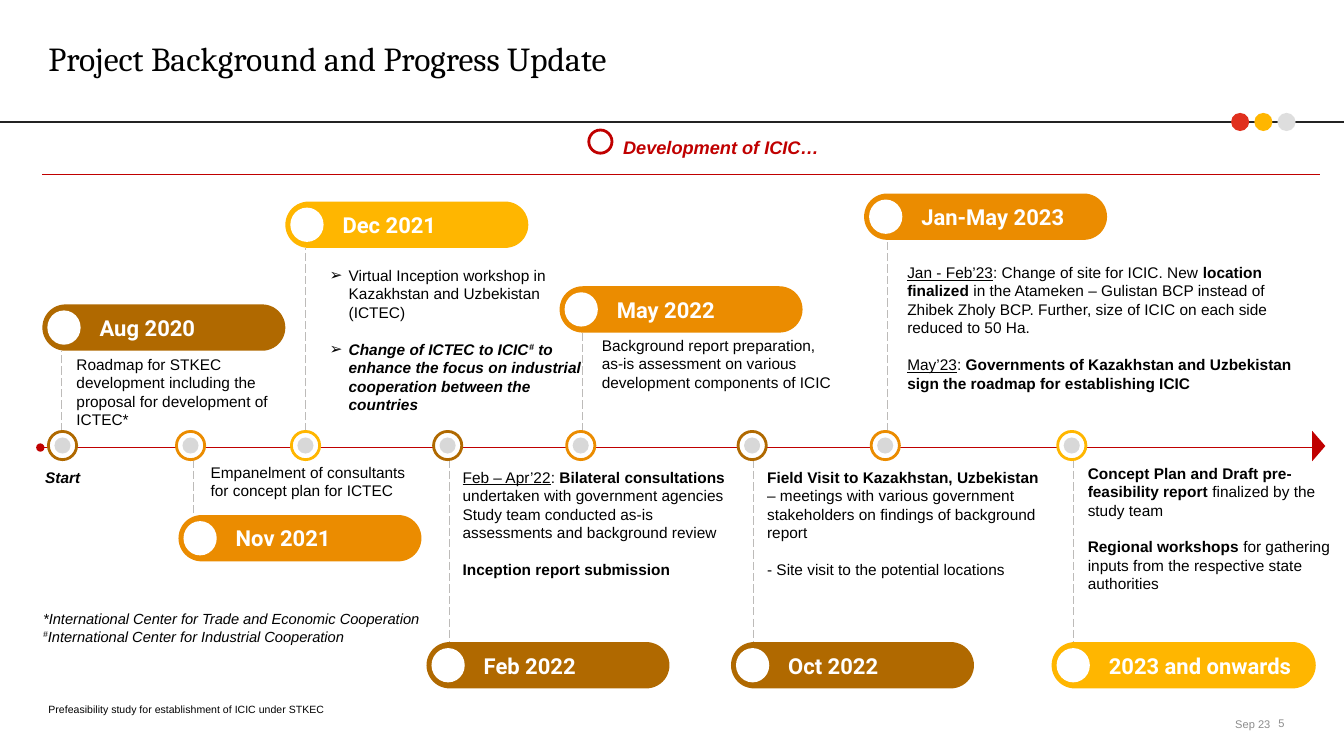
from collections import namedtuple
from dataclasses import dataclass

from lxml.etree import SubElement
from pptx import Presentation
from pptx.dml.color import RGBColor
from pptx.enum.dml import MSO_LINE
from pptx.enum.shapes import MSO_CONNECTOR, MSO_SHAPE
from pptx.enum.text import MSO_ANCHOR, PP_ALIGN
from pptx.oxml.ns import qn
from pptx.util import Inches, Pt


@dataclass(frozen=True)
class Theme:
    black: str = "000000"
    white: str = "FFFFFF"
    rule: str = "232323"
    accent: str = "C00000"
    red: str = "E0301E"
    yellow: str = "FFB600"
    orange: str = "EB8C00"
    brown: str = "B06900"
    light: str = "DEDEDE"
    core: str = "D8D8D8"
    stem: str = "BDBBB9"
    muted: str = "8C8C8C"
    body_font: str = "Arial"
    title_font: str = "Cambria"
    date_font: str = "Roboto"
    title: float = 24
    date: float = 15.7
    heading: float = 13
    body: float = 11
    note: float = 10.5
    number: float = 7.9
    footer: float = 7.5
    gap: float = 13


T = Theme()
Milestone = namedtuple("Milestone", "date left top width color node stem")
MILESTONES = [
    Milestone("Aug 2020", 0.42, 3.02, 2.41, T.brown, 0.48, 0.61),
    Milestone("Nov 2021", 1.77, 5.11, 2.41, T.orange, 1.75, 1.92),
    Milestone("Dec 2021", 2.83, 2.0, 2.41, T.yellow, 2.89, 3.03),
    Milestone("Feb 2022", 4.23, 6.37, 2.41, T.brown, 4.3, 4.46),
    Milestone("May 2022", 5.55, 2.84, 2.41, T.orange, 5.62, 5.78),
    Milestone("Oct 2022", 7.25, 6.37, 2.41, T.brown, 7.32, 7.47),
    Milestone("Jan-May 2023", 8.57, 1.92, 2.41, T.orange, 8.64, 8.8),
    Milestone("2023 and onwards", 10.43, 6.37, 2.62, T.yellow, 10.49, 10.65),
]
AXIS_Y = 4.44
PILL_HEIGHT = 0.46
NODE_TOP = 4.28
NODE_SIZE = 0.28

DETAILS = [
    ((0.66, 3.52, 2.45, 0.82), [[
        ("Roadmap for STKEC development including the proposal for development of ICTEC*", "")]]),
    ((1.99, 4.59, 2.17, 0.69), [[
        ("Empanelment of consultants for concept plan for ICTEC", "")]]),
    ((4.49, 4.64, 2.83, 1.54), [
        [("Feb – Apr’22", "u"), (":", ""), (" Bilateral consultations ", "b"),
         ("undertaken with government agencies", "")],
        [("Study team conducted as-is assessments and background review", "")],
        [("Inception report submission", "b")]]),
    ((5.87, 3.33, 2.51, 0.84), [[
        ("Background report preparation, as-is assessment on various development "
         "components of ICIC", "")]]),
    ((7.51, 4.64, 2.92, 1.54), [
        [("Field Visit to Kazakhstan, Uzbekistan ", "b"),
         ("– meetings with various government stakeholders on findings of background report", "")],
        [("- Site visit to the potential locations", "")]]),
    ((8.9, 2.61, 4.02, 1.61), [
        [("Jan - Feb’23", "u"), (": Change of site for ICIC. New ", ""),
         ("location finalized ", "b"),
         ("in the Atameken – Gulistan BCP instead of Zhibek Zholy BCP. Further, size of "
          "ICIC on each side reduced to 50 Ha.", "")],
        [("May’23", "u"), (": ", ""),
         ("Governments of Kazakhstan and Uzbekistan sign the roadmap for establishing ICIC", "b")]]),
    ((10.69, 4.6, 2.62, 1.7), [
        [("Concept Plan and Draft pre-feasibility report ", "b"),
         ("finalized by the study team", "")],
        [("Regional workshops ", "b"),
         ("for gathering inputs from the respective state authorities", "")]]),
    ((0.35, 4.64, 0.93, 0.22), [[("Start", "bi")]]),
]
INCEPTION = [
    [("Virtual Inception workshop in Kazakhstan and Uzbekistan (ICTEC)", "")],
    [("Change of ICTEC to ICIC", "bi"), ("#", "bi^"),
     (" to enhance the focus on industrial cooperation between the countries", "bi")],
]
FOOTNOTES = [
    [("*International Center for Trade and Economic Cooperation", "i")],
    [("#", "i^"), ("International Center for Industrial Cooperation", "i")],
]


def rgb(color):
    return RGBColor.from_string(color)


def add_bullet(paragraph):
    properties = paragraph._p.get_or_add_pPr()
    properties.set("marL", str(Inches(0.19)))
    properties.set("indent", str(Inches(-0.19)))
    tint = SubElement(properties, qn("a:buClr"))
    SubElement(tint, qn("a:srgbClr")).set("val", T.black)
    SubElement(properties, qn("a:buFont")).set("typeface", T.body_font)
    SubElement(properties, qn("a:buChar")).set("char", "➢")


def write(frame, paragraphs, size=T.body, color=T.black, font=T.body_font, inset=(0.1, 0, 0.1, 0),
          anchor=MSO_ANCHOR.TOP, align=PP_ALIGN.LEFT, bullets=False, gaps=()):
    frame.word_wrap = True
    frame.vertical_anchor = anchor
    (frame.margin_left, frame.margin_top,
     frame.margin_right, frame.margin_bottom) = map(Inches, inset)
    for index, runs in enumerate(paragraphs):
        paragraph = frame.add_paragraph() if index else frame.paragraphs[0]
        paragraph.alignment = align
        if index in gaps:
            paragraph.space_before = Pt(T.gap)
        if bullets:
            add_bullet(paragraph)
        for words, style in runs:
            run = paragraph.add_run()
            run.text = words
            run.font.name, run.font.size = font, Pt(size)
            run.font.color.rgb = rgb(color)
            run.font.bold = "b" in style
            run.font.italic = "i" in style
            run.font.underline = "u" in style
            if "^" in style:
                run._r.get_or_add_rPr().set("baseline", "30000")


def add_text(slide, box, paragraphs, **look):
    write(slide.shapes.add_textbox(*map(Inches, box)).text_frame, paragraphs, **look)


def add_figure(slide, kind, box, fill, outline=None):
    figure = slide.shapes.add_shape(kind, *map(Inches, box))
    figure.shadow.inherit = False
    figure.fill.solid()
    figure.fill.fore_color.rgb = rgb(fill)
    if outline:
        figure.line.color.rgb = rgb(outline)
        figure.line.width = Pt(2)
    else:
        figure.line.fill.background()
    return figure


def add_line(slide, start, end, color, width=0.75, dashed=False, ovals=False):
    line = slide.shapes.add_connector(MSO_CONNECTOR.STRAIGHT, *map(Inches, start + end))
    line.line.color.rgb = rgb(color)
    line.line.width = Pt(width)
    if dashed:
        line.line.dash_style = MSO_LINE.LONG_DASH
    if ovals:
        for tip in ("a:headEnd", "a:tailEnd"):
            SubElement(line.line._get_or_add_ln(), qn(tip)).set("type", "oval")
    SubElement(line._element.spPr, qn("a:effectLst"))


def add_pill(slide, stone):
    pill = add_figure(slide, MSO_SHAPE.ROUNDED_RECTANGLE,
                      (stone.left, stone.top, stone.width, PILL_HEIGHT), stone.color)
    pill.adjustments[0] = 0.5
    write(pill.text_frame, [[(stone.date, "b")]], size=T.date, color=T.white, font=T.date_font,
          inset=(0.5, 0, 0, 0), anchor=MSO_ANCHOR.MIDDLE)
    if stone.top < AXIS_Y:
        start, end = NODE_TOP, stone.top + PILL_HEIGHT
    else:
        start, end = NODE_TOP + NODE_SIZE, stone.top
    add_line(slide, (stone.stem, start), (stone.stem, end), T.stem, dashed=True)
    add_figure(slide, MSO_SHAPE.OVAL, (stone.left + 0.05, stone.top + 0.06, 0.33, 0.34), T.white)


def add_node(slide, stone):
    add_figure(slide, MSO_SHAPE.OVAL, (stone.node, NODE_TOP, NODE_SIZE, NODE_SIZE),
               T.white, stone.color)
    add_figure(slide, MSO_SHAPE.OVAL, (stone.node + 0.06, NODE_TOP + 0.06, 0.16, 0.16), T.core)


def add_header(slide):
    add_line(slide, (0, 1.21), (13.33, 1.21), T.rule, 2)
    for index, color in enumerate((T.red, T.yellow, T.light)):
        add_figure(slide, MSO_SHAPE.OVAL, (12.21 + 0.23 * index, 1.12, 0.18, 0.18), color)
    add_text(slide, (0.48, 0.38, 12.36, 0.4), [[("Project Background and Progress Update", "")]],
             size=T.title, font=T.title_font, inset=(0, 0, 0, 0), anchor=MSO_ANCHOR.MIDDLE)
    add_line(slide, (0.42, 1.73), (13.09, 1.73), T.accent)
    add_text(slide, (2.02, 1.31, 10.26, 0.3), [[("Development of ICIC…", "bi")]],
             size=T.heading, color=T.accent, inset=(0.1, 0.1, 0.1, 0.1),
             anchor=MSO_ANCHOR.MIDDLE, align=PP_ALIGN.CENTER)
    add_figure(slide, MSO_SHAPE.OVAL, (5.84, 1.29, 0.23, 0.23), T.white, T.accent)


def add_footer(slide):
    add_text(slide, (0.33, 6.05, 4.23, 0.4), FOOTNOTES, size=T.note)
    add_text(slide, (0.48, 6.95, 5.99, 0.15),
             [[("Prefeasibility study for establishment of ICIC under STKEC", "")]],
             size=T.footer, inset=(0, 0, 0, 0), anchor=MSO_ANCHOR.BOTTOM)
    add_text(slide, (10.67, 7.1, 1.93, 0.15), [[("Sep 23", "")]], size=T.number, color=T.muted,
             inset=(0, 0, 0, 0), anchor=MSO_ANCHOR.BOTTOM, align=PP_ALIGN.RIGHT)
    add_text(slide, (10.92, 7.1, 1.93, 0.15), [[("5", "")]], size=T.number, color=T.muted,
             inset=(0.11, 0.06, 0.11, 0.06), anchor=MSO_ANCHOR.MIDDLE, align=PP_ALIGN.RIGHT)


def main():
    deck = Presentation()
    deck.slide_width, deck.slide_height = Inches(13.33), Inches(7.5)
    slide = deck.slides.add_slide(deck.slide_layouts[6])
    add_header(slide)
    for stone in MILESTONES:
        add_pill(slide, stone)
    add_line(slide, (0.4, AXIS_Y), (13.07, AXIS_Y), T.accent, ovals=True)
    for stone in MILESTONES:
        add_node(slide, stone)
    add_figure(slide, MSO_SHAPE.ISOSCELES_TRIANGLE, (12.93, 4.36, 0.3, 0.13), T.accent).rotation = 90
    for box, paragraphs in DETAILS:
        add_text(slide, box, paragraphs, gaps=(len(paragraphs) - 1,) if len(paragraphs) > 1 else ())
    add_text(slide, (3.17, 2.64, 2.77, 1.66), INCEPTION, bullets=True, gaps=(1,))
    add_footer(slide)
    deck.save("out.pptx")


if __name__ == "__main__":
    main()
